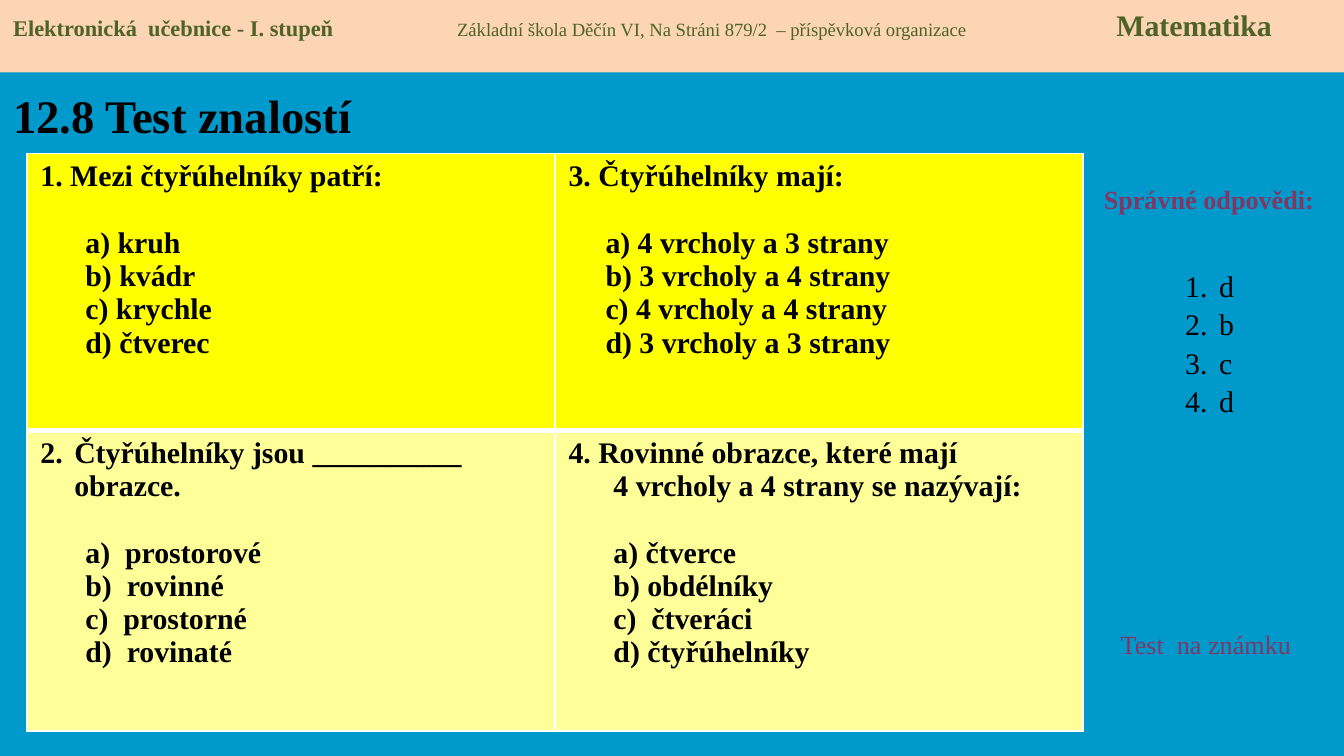
from dataclasses import dataclass

from lxml import etree
from pptx import Presentation
from pptx.dml.color import RGBColor
from pptx.enum.shapes import MSO_SHAPE
from pptx.enum.text import MSO_ANCHOR, PP_ALIGN
from pptx.oxml.ns import qn
from pptx.util import Cm, Pt

RECTANGLE = MSO_SHAPE.RECTANGLE
TOP, MIDDLE = MSO_ANCHOR.TOP, MSO_ANCHOR.MIDDLE
LEFT, CENTER = PP_ALIGN.LEFT, PP_ALIGN.CENTER


@dataclass(frozen=True)
class Theme:
    font: str = "Times New Roman"
    background: str = "0099CC"
    banner: str = "FCD5B5"
    banner_text: str = "4F6228"
    text: str = "000000"
    accent: str = "813763"
    border: str = "FFFFFF"
    row_fills: tuple = ("FFFF00", "FFFF99")
    title_size: int = 25
    body_size: int = 16
    note_size: int = 14
    school_size: int = 10
    book_size: int = 12


THEME = Theme()


def add_run(paragraph, text, size=THEME.body_size, color=THEME.text, bold=False):
    run = paragraph.add_run()
    run.text = text
    run.font.name = THEME.font
    run.font.size = Pt(size)
    run.font.bold = bold
    run.font.color.rgb = RGBColor.from_string(color)


def write(frame, text, first=False, align=LEFT, indent=0, number=None,
          before=0, **run_format):
    """Add one paragraph; number is the value its automatic numbering starts at."""
    paragraph = frame.paragraphs[0] if first else frame.add_paragraph()
    properties = paragraph._p.get_or_add_pPr()
    if indent:
        properties.set("marL", str(Cm(indent)))
    if number:
        properties.set("indent", str(-Cm(indent)))
        numbering = etree.SubElement(properties, qn("a:buAutoNum"), type="arabicPeriod")
        if number > 1:
            numbering.set("startAt", str(number))
    paragraph.alignment = align
    if before:
        paragraph.space_before = Pt(before)
    add_run(paragraph, text, **run_format)


def set_borders(cell, **widths):
    properties = cell._tc.get_or_add_tcPr()
    for side in ("L", "R", "T", "B"):
        line = etree.SubElement(properties, qn(f"a:ln{side}"), w=str(Pt(widths.get(side, 1))))
        fill = etree.SubElement(line, qn("a:solidFill"))
        etree.SubElement(fill, qn("a:srgbClr"), val=THEME.border)


class SlideBuilder:
    def __init__(self, presentation, theme):
        self.theme = theme
        self.slide = presentation.slides.add_slide(presentation.slide_layouts[6])
        fill = self.slide.background.fill
        fill.solid()
        fill.fore_color.rgb = RGBColor.from_string(theme.background)

    def text_box(self, left, top, width, height, anchor=TOP):
        box = self.slide.shapes.add_textbox(Cm(left), Cm(top), Cm(width), Cm(height))
        frame = box.text_frame
        frame.word_wrap = True
        frame.vertical_anchor = anchor
        return frame

    def banner(self, width, height, parts, tab_stops):
        """Draw the top strip, with its parts set on one line at the tab stops."""
        shape = self.slide.shapes.add_shape(RECTANGLE, 0, 0, Cm(width), Cm(height))
        shape.shadow.inherit = False
        shape.fill.solid()
        shape.fill.fore_color.rgb = RGBColor.from_string(self.theme.banner)
        shape.line.fill.background()
        frame = shape.text_frame
        frame.word_wrap = True
        frame.vertical_anchor = TOP
        paragraph = frame.paragraphs[0]
        paragraph.alignment = LEFT
        tabs = etree.SubElement(paragraph._p.get_or_add_pPr(), qn("a:tabLst"))
        for stop in tab_stops:
            etree.SubElement(tabs, qn("a:tab"), pos=str(Cm(stop)), algn="l")
        for index, (text, size, bold) in enumerate(parts):
            add_run(paragraph, "\t" + text if index else text, size=size,
                    bold=bold, color=self.theme.banner_text)

    def question_table(self, left, top, column_width, row_heights, questions):
        rows, columns = len(questions), len(questions[0])
        table = self.slide.shapes.add_table(
            rows, columns, Cm(left), Cm(top),
            Cm(columns * column_width), Cm(sum(row_heights))).table
        table.first_row = table.horz_banding = False
        for column in table.columns:
            column.width = Cm(column_width)
        for row_index, row in enumerate(questions):
            table.rows[row_index].height = Cm(row_heights[row_index])
            for column_index, question in enumerate(row):
                cell = table.cell(row_index, column_index)
                set_borders(cell, **({"T": 3} if row_index else {"B": 3}))
                cell.fill.solid()
                cell.fill.fore_color.rgb = RGBColor.from_string(
                    self.theme.row_fills[row_index])
                self.question(cell.text_frame, **question)

    def question(self, frame, heading, options, indent=0.85, number=None, continued=None):
        write(frame, heading, first=True, bold=True, number=number,
              indent=0.64 if number else 0)
        if continued:
            write(frame, continued, bold=True, indent=indent)
        for index, option in enumerate(options):
            write(frame, option, bold=True, indent=indent, before=0 if index else 18)


QUESTIONS = [
    [
        dict(heading="1. Mezi čtyřúhelníky patří:",
             options=["a) kruh", "b) kvádr", "c) krychle", "d) čtverec"]),
        dict(heading="3. Čtyřúhelníky mají:", indent=0.7,
             options=["a) 4 vrcholy a 3 strany", "b) 3 vrcholy a 4 strany",
                      "c) 4 vrcholy a 4 strany", "d) 3 vrcholy a 3 strany"]),
    ],
    [
        dict(heading="Čtyřúhelníky jsou __________ obrazce.", number=2,
             options=["a)  prostorové", "b)  rovinné", "c)  prostorné", "d)  rovinaté"]),
        dict(heading="4. Rovinné obrazce, které mají",
             continued="4 vrcholy a 4 strany se nazývají:",
             options=["a) čtverce", "b) obdélníky", "c)  čtveráci", "d) čtyřúhelníky"]),
    ],
]


def main():
    presentation = Presentation()
    presentation.slide_width, presentation.slide_height = Cm(25.4), Cm(14.29)
    builder = SlideBuilder(presentation, THEME)

    title = builder.text_box(0, 1.35, 8.1, 1.65, anchor=MIDDLE)
    write(title, "12.8 Test znalostí", first=True, size=THEME.title_size, bold=True)

    answers_heading = builder.text_box(20.45, 3.35, 4.8, 0.86)
    write(answers_heading, "Správné odpovědi:", first=True, align=CENTER,
          size=THEME.note_size, color=THEME.accent, bold=True)

    builder.question_table(0.51, 2.9, 9.98, [5.23, 5.69], QUESTIONS)

    answers = builder.text_box(22.15, 4.19, 1.4, 5.05)
    answers.margin_top = Cm(0.87)
    for index, answer in enumerate("dbcd"):
        write(answers, answer, first=index == 0, indent=0.64, number=1,
              before=1.4 if index else 0)

    test_note = builder.text_box(20.93, 11.76, 3.99, 0.86)
    write(test_note, "Test  na známku", first=True,
          size=THEME.note_size, color=THEME.accent)

    builder.banner(25.4, 1.37, [
        ("Elektronická  učebnice - I. stupeň", THEME.book_size, True),
        ("Základní škola Děčín VI, Na Stráni 879/2  – příspěvková organizace",
         THEME.school_size, False),
        ("Matematika", THEME.body_size, True),
    ], tab_stops=[8.39, 20.85])

    presentation.save("out.pptx")


if __name__ == "__main__":
    main()
